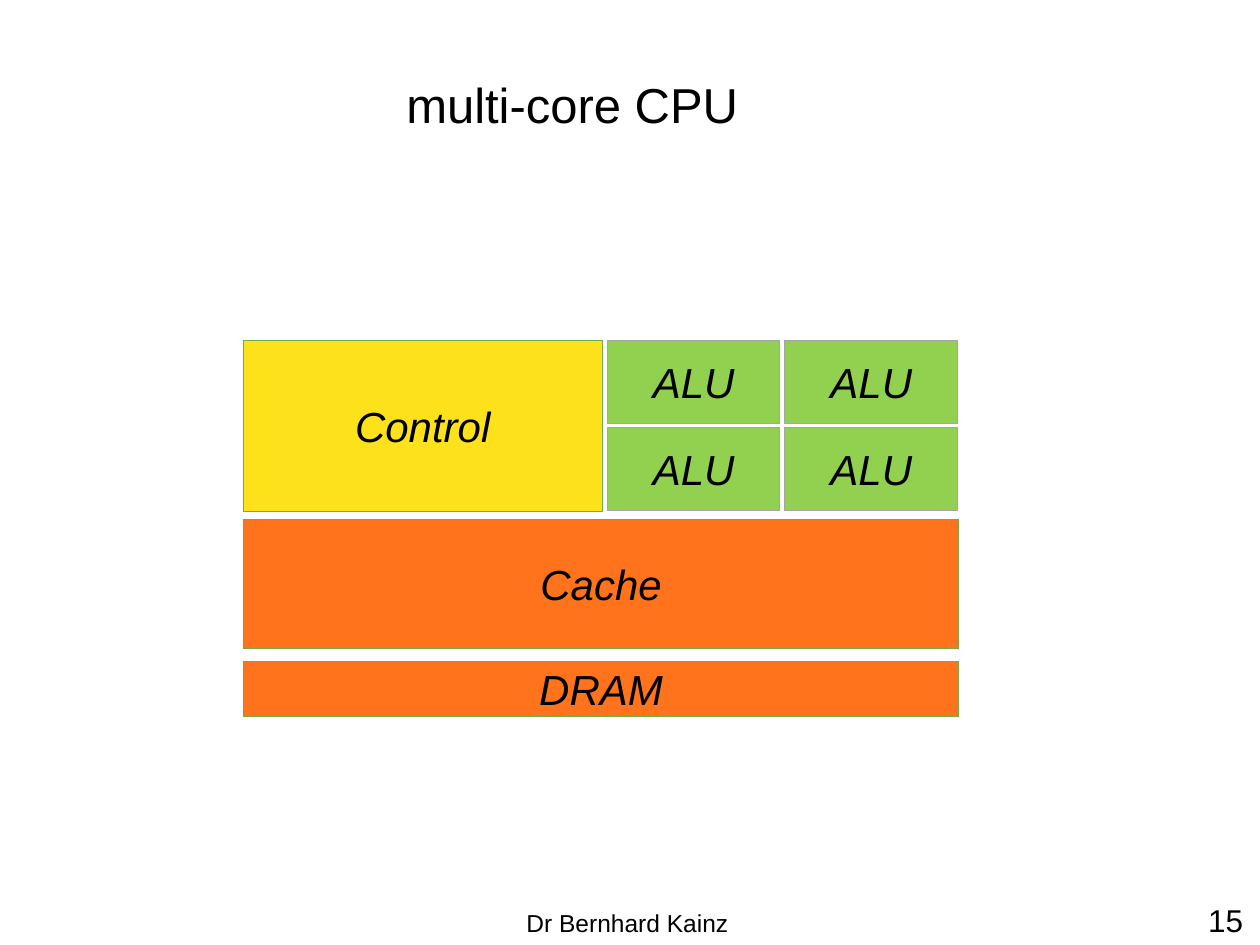
from pptx import Presentation
from pptx import util as u
from pptx.dml.color import RGBColor
from pptx.enum import shapes, text

COLORS = {
    "text": "000000",
    "control": "FDE21B",
    "alu": "92D050",
    "memory": "FF731D",
    "green": "70AD47",
    "gray": "A5A5A5",
}


def write(shape, words, size, align, anchor, italic=None):
    """Put one styled paragraph into a shape."""
    frame = shape.text_frame
    frame.vertical_anchor = anchor
    par = frame.paragraphs[0]
    par.text = words
    par.alignment = align
    par.font.name = "Arial"
    par.font.size = u.Pt(size)
    par.font.italic = italic
    par.font.color.rgb = RGBColor.from_string(COLORS["text"])
    return frame


deck = Presentation()
deck.slide_width = u.Inches(10)
deck.slide_height = u.Inches(7.5)
slide = deck.slides.add_slide(deck.slide_layouts[6])

# Footer and page number
for words, size, box in [
    ("15", 18, (9.49, 7.1, 0.51, 0.4)),
    ("Dr Bernhard Kainz", 14, (4.08, 7.16, 1.81, 0.34)),
]:
    note = slide.shapes.add_textbox(*map(u.Inches, box))
    frame = write(note, words, size, text.PP_ALIGN.LEFT, text.MSO_ANCHOR.TOP)
    frame.word_wrap = False
    frame.auto_size = text.MSO_AUTO_SIZE.SHAPE_TO_FIT_TEXT

# Title
title = slide.shapes.add_textbox(*map(u.Inches, (0.81, 0.25, 7.51, 1.15)))
frame = write(title, "multi-core CPU", 28, text.PP_ALIGN.CENTER,
              text.MSO_ANCHOR.MIDDLE)
frame.word_wrap = True
frame.margin_left = u.Inches(0.05)

# Processor blocks: label, fill, line, box
blocks = [
    ("Control", "control", "green", (1.93, 2.7, 2.85, 1.36)),
    ("Cache", "memory", "green", (1.93, 4.12, 5.68, 1.03)),
    ("DRAM", "memory", "green", (1.93, 5.25, 5.68, 0.44)),
]
for row in range(2):
    for col in range(2):
        box = (4.82 + col * 1.41, 2.7 + row * 0.69, 1.37, 0.66)
        blocks.append(("ALU", "alu", "gray", box))

for label, fill, line, box in blocks:
    block = slide.shapes.add_shape(shapes.MSO_SHAPE.RECTANGLE,
                                   *map(u.Inches, box))
    block.shadow.inherit = False
    block.fill.solid()
    block.fill.fore_color.rgb = RGBColor.from_string(COLORS[fill])
    block.line.color.rgb = RGBColor.from_string(COLORS[line])
    block.line.width = u.Pt(0.5)
    write(block, label, 24, text.PP_ALIGN.CENTER, text.MSO_ANCHOR.MIDDLE, True)

deck.save("out.pptx")
